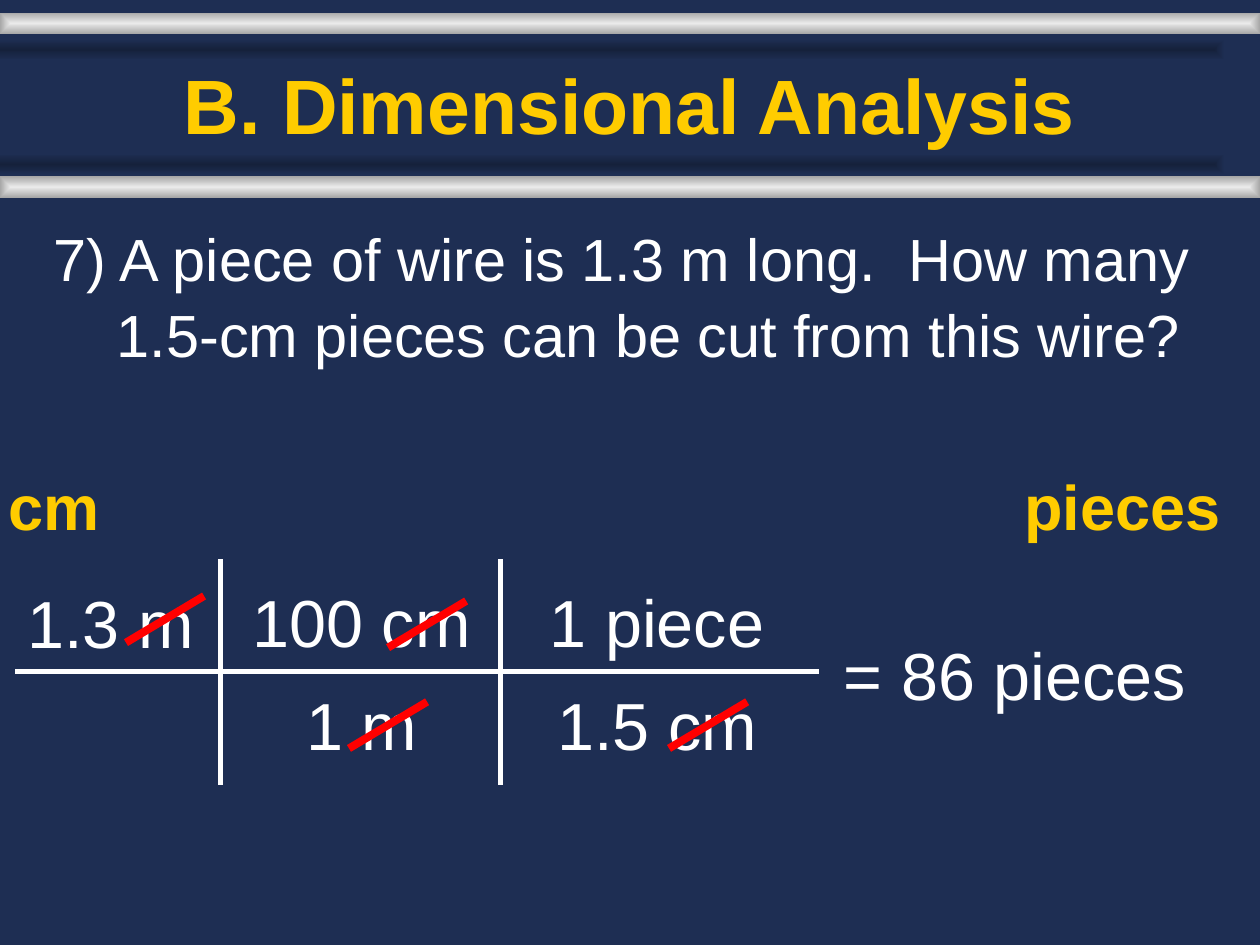
from lxml import etree
from pptx import Presentation
from pptx.dml.color import RGBColor
from pptx.enum.shapes import MSO_CONNECTOR, MSO_SHAPE
from pptx.enum.text import MSO_ANCHOR, PP_ALIGN
from pptx.oxml.ns import qn
from pptx.util import Inches, Pt

LEFT, CENTER = PP_ALIGN.LEFT, PP_ALIGN.CENTER
BOTTOM = MSO_ANCHOR.BOTTOM
RECTANGLE = MSO_SHAPE.RECTANGLE
STRAIGHT = MSO_CONNECTOR.STRAIGHT
TITLE_ONLY = 5

NAVY, SHADE = "1E2E53", "15213B"
SILVER, GREY = "EAEAEA", "A7A7A7"
GOLD, WHITE, RED = "FFCC00", "FFFFFF", "FF0000"


def color(hex_text):
    return RGBColor.from_string(hex_text)


def place(shape, box):
    shape.left, shape.top, shape.width, shape.height = map(Inches, box)


def style(para, size, hex_text, bold=False, align=LEFT, spacing=None, hang=0):
    para.alignment = align
    para.line_spacing = spacing
    font = para.font
    font.name, font.size, font.bold = "Arial", Pt(size), bold
    font.color.rgb = color(hex_text)
    if hang:
        properties = para._p.get_or_add_pPr()
        properties.set("marL", str(Inches(hang)))
        properties.set("indent", str(-Inches(hang)))


def add_text(slide, box, lines, size=38, hex_text=WHITE, bold=False,
             align=LEFT, spacing=1.05, hang=0.5, gap=11, wrap=True):
    frame = slide.shapes.add_textbox(*map(Inches, box)).text_frame
    frame.word_wrap = wrap
    for index, line in enumerate(lines):
        para = frame.add_paragraph() if index else frame.paragraphs[0]
        para.text = line
        style(para, size, hex_text, bold, align, spacing, hang)
        if index:
            para.space_before = Pt(gap)


def add_line(slide, start, end, hex_text=WHITE, width=3):
    line = slide.shapes.add_connector(STRAIGHT, *map(Inches, start + end))
    line.line.color.rgb = color(hex_text)
    line.line.width = Pt(width)
    etree.SubElement(line._element.spPr, qn("a:effectLst"))


def add_bar(slide, box, inner, outer):
    bar = slide.shapes.add_shape(RECTANGLE, *map(Inches, box))
    bar.shadow.inherit = False
    bar.line.fill.background()
    bar.fill.gradient()
    for stop, hex_text in zip(bar.fill.gradient_stops, (inner, outer)):
        stop.color.rgb = color(hex_text)
    # Turn the linear gradient into one that runs out from the centre
    gradient = bar._element.spPr.find(qn("a:gradFill"))
    gradient.remove(gradient.find(qn("a:lin")))
    shade = etree.SubElement(gradient, qn("a:path"), {"path": "shape"})
    etree.SubElement(shade, qn("a:fillToRect"),
                     {side: "50000" for side in "ltrb"})


def add_header(slide, box):
    left, top, width, height = box
    bar_height = 0.17
    # Silver bars, each with a dark shadow bar on its inner side
    for bar_top, shadow_top in ((top, top + 0.21),
                                (top + height - bar_height, top + 1.12)):
        add_bar(slide, (left, bar_top, width, bar_height), SILVER, GREY)
        add_bar(slide, (left - 0.28, shadow_top, width, bar_height), SHADE, NAVY)
    # Title
    title = slide.shapes.title
    place(title, (left + 0.75, top + 0.22, width - 1.5, 0.92))
    frame = title.text_frame
    frame.text = "B. Dimensional Analysis"
    frame.vertical_anchor = BOTTOM
    style(frame.paragraphs[0], 44, GOLD, bold=True, align=CENTER)


def add_unit_labels(slide, box):
    left, top, width, height = box
    for text, label_left, label_width in (("cm", left, 0.92),
                                          ("pieces", left + width - 1.76, 1.76)):
        add_text(slide, (label_left, top, label_width, height), [text], size=36,
                 hex_text=GOLD, bold=True, align=CENTER, hang=0, wrap=False)


def add_conversion(slide, box):
    left, top, width, height = box
    # Factors: given value, then numerator over denominator
    add_text(slide, (left, top + 0.1, 2.11, 0.86), ["1.3 m"])
    for column_left, column_width, factor in ((1.82, 2.1, ["100 cm", "1 m"]),
                                              (3.96, 2.51, ["1 piece", "1.5 cm"])):
        add_text(slide, (column_left, top + 0.09, column_width, 1.77), factor,
                 align=CENTER)
    # Fraction bar and dividers
    add_line(slide, (left, top + 0.89), (left + width, top + 0.89))
    for x in (1.75, 3.97):
        add_line(slide, (x, top), (x, top + height))
    # Strokes through the cancelled units
    for x, y in ((1, 5.1), (2.77, 5.94), (3.08, 5.14), (5.31, 5.94)):
        add_line(slide, (x + 0.62, y - 0.37), (x, y), RED, 4.5)
    # Result
    add_text(slide, (left + width + 0.1, top + 0.51, 3.4, 0.79), ["= 86 pieces"])


def main():
    deck = Presentation()
    deck.slide_width, deck.slide_height = Inches(10), Inches(7.5)
    slide = deck.slides.add_slide(deck.slide_layouts[TITLE_ONLY])
    slide.background.fill.solid()
    slide.background.fill.fore_color.rgb = color(NAVY)

    add_header(slide, (0, 0.1, 10, 1.47))
    add_text(slide, (0.33, 1.67, 9.33, 1.54),
             ["7) A piece of wire is 1.3 m long.  How many "
              "1.5-cm pieces can be cut from this wire?"],
             size=34, spacing=1.07)
    add_unit_labels(slide, (-0.03, 3.63, 9.82, 0.7))
    add_conversion(slide, (0.12, 4.44, 6.38, 1.79))
    deck.save("out.pptx")


if __name__ == "__main__":
    main()
